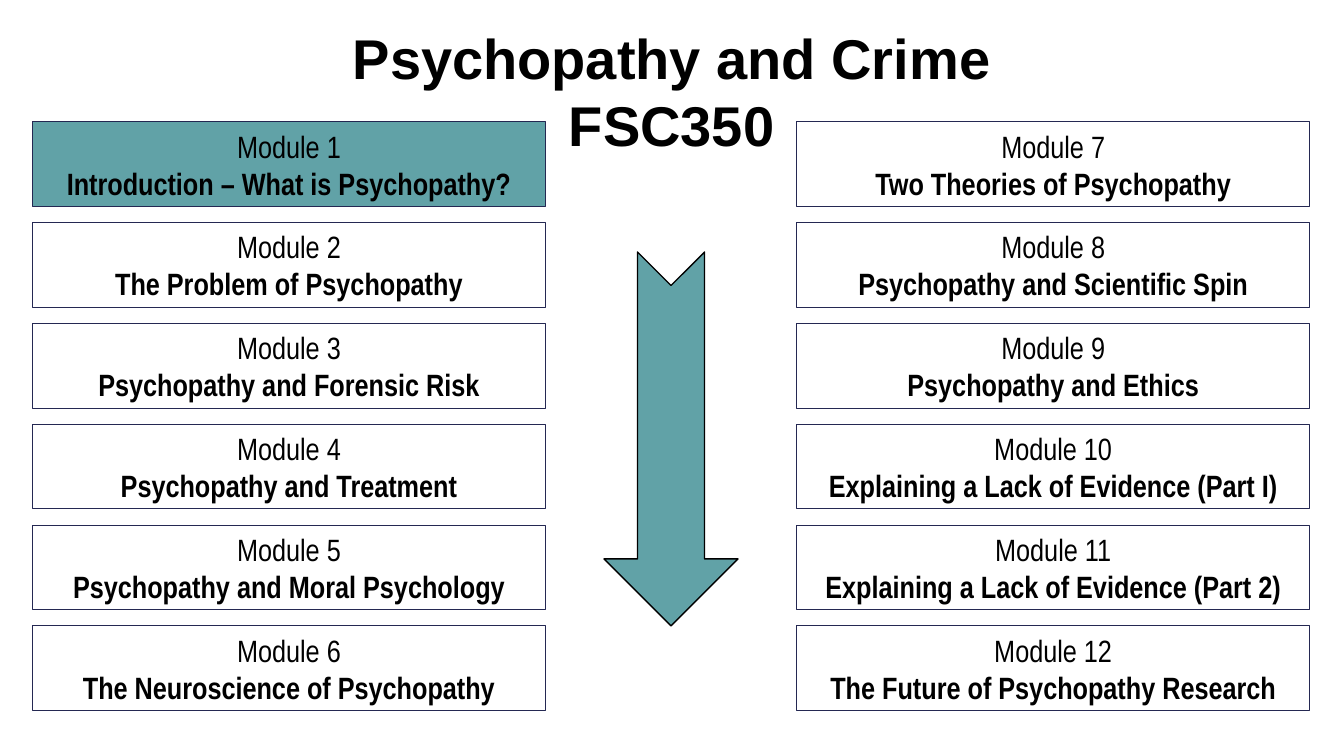
from pptx import Presentation
from pptx.dml.color import RGBColor
from pptx.enum.shapes import MSO_SHAPE
from pptx.enum.text import MSO_ANCHOR, PP_ALIGN
from pptx.util import Inches, Pt

RECT = MSO_SHAPE.RECTANGLE
ARROW = MSO_SHAPE.NOTCHED_RIGHT_ARROW
MIDDLE = MSO_ANCHOR.MIDDLE
CENTER = PP_ALIGN.CENTER

TEAL, WHITE, BLACK, NAVY = "61A2A7", "FFFFFF", "000000", "242852"
TOP, PITCH = 1.21, 1.0
COLUMNS = [
    (0.32, [
        "Introduction – What is Psychopathy?",
        "The Problem of Psychopathy",
        "Psychopathy and Forensic Risk",
        "Psychopathy and Treatment",
        "Psychopathy and Moral Psychology",
        "The Neuroscience of Psychopathy",
    ]),
    (7.9, [
        "Two Theories of Psychopathy",
        "Psychopathy and Scientific Spin",
        "Psychopathy and Ethics",
        "Explaining a Lack of Evidence (Part I)",
        "Explaining a Lack of Evidence (Part 2)",
        "The Future of Psychopathy Research",
    ]),
]


def add_block(kind, left, top, width, height, fill, line, weight):
    shape = slide.shapes.add_shape(
        kind, Inches(left), Inches(top), Inches(width), Inches(height))
    shape.shadow.inherit = False
    shape.fill.solid()
    shape.fill.fore_color.rgb = RGBColor.from_string(fill)
    shape.line.color.rgb = RGBColor.from_string(line)
    shape.line.width = Pt(weight)
    return shape


def write_lines(frame, lines, face, size):
    """Write centred lines, given as (text, bold) pairs."""
    frame.text = "\n".join(text for text, bold in lines)
    for para, (text, bold) in zip(frame.paragraphs, lines):
        para.alignment = CENTER
        para.font.name = face
        para.font.size = Pt(size)
        para.font.bold = bold
        para.font.color.rgb = RGBColor.from_string(BLACK)


deck = Presentation()
deck.slide_width = Inches(13.33)
deck.slide_height = Inches(7.5)
slide = deck.slides.add_slide(deck.slide_layouts[6])

# Title
title = slide.shapes.add_textbox(
    Inches(3.37), Inches(0.18), Inches(6.58), Inches(1.45))
title.text_frame.word_wrap = False
write_lines(title.text_frame,
            [("Psychopathy and Crime", True), ("FSC350", True)], "Arial", 40)

# Module boxes, numbered down the left column and then the right
number = 1
for left, topics in COLUMNS:
    for row, topic in enumerate(topics):
        fill = TEAL if number == 1 else WHITE
        box = add_block(RECT, left, TOP + row * PITCH, 5.09, 0.84,
                        fill, NAVY, 0.75)
        box.text_frame.word_wrap = True
        box.text_frame.vertical_anchor = MIDDLE
        write_lines(box.text_frame,
                    [(f"Module {number}", False), (topic, True)],
                    "Arial Narrow", 22)
        number += 1

# Arrow pointing down between the columns
arrow = add_block(ARROW, 4.8, 3.69, 3.71, 1.33, TEAL, BLACK, 1)
arrow.rotation = 90

deck.save("out.pptx")
